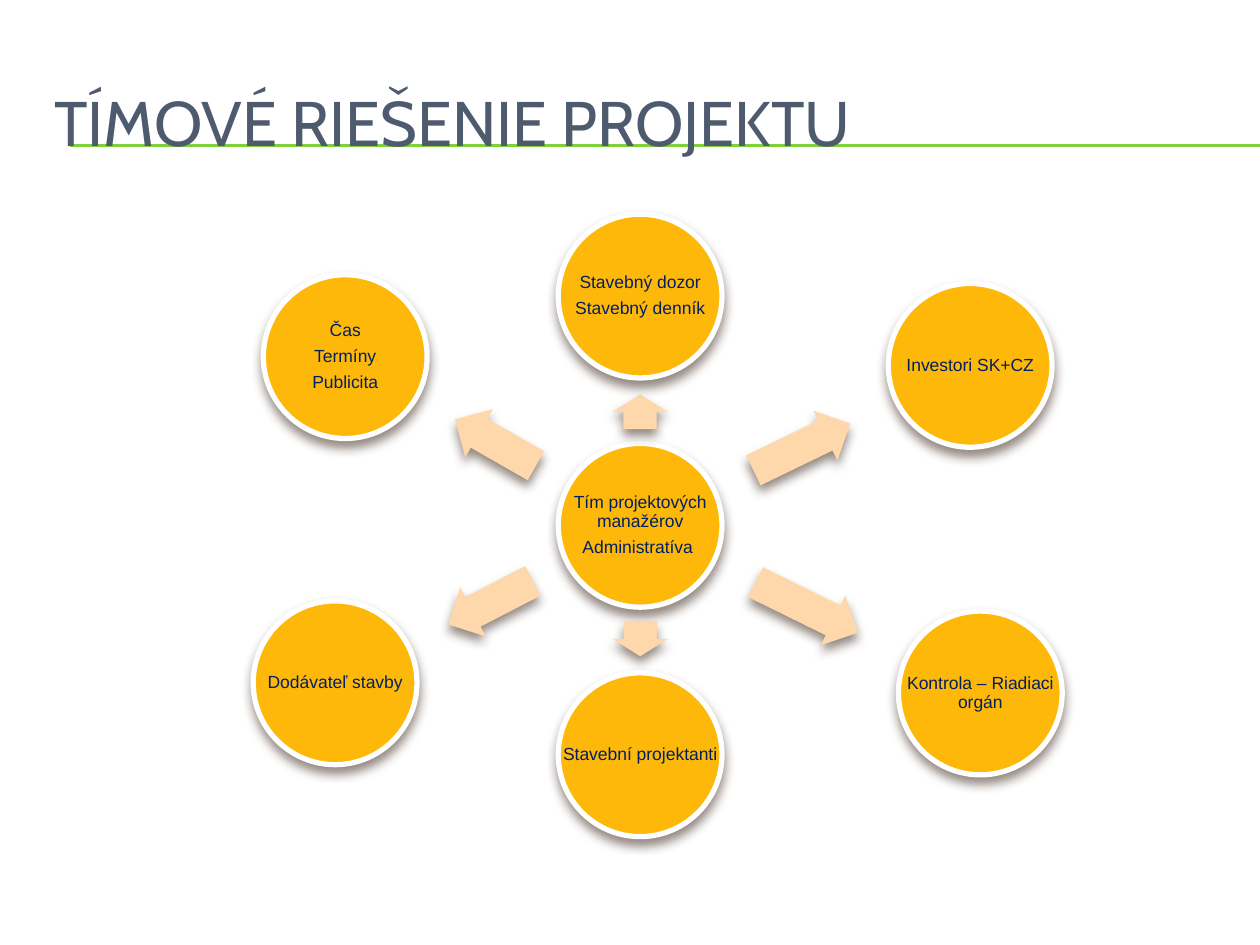
import math
from lxml import etree
from pptx import Presentation
from pptx.dml.color import RGBColor
from pptx.enum import shapes, text
from pptx.oxml import ns
from pptx.util import Pt

COLORS = {
    "rule": "7FD13B",
    "title": "4E5B6F",
    "circle": "FEB80A",
    "border": "FFFFFF",
    "arrow": "FED8AB",
    "label": "002060",
    "shadow": "4E3B30",
}
DIAMETER = 93.6
ARROW_HEIGHT = 31.7
ARROW_SHARE = 0.53
START_SHARE = 0.217
HUB = ((365.8, 300.2), ["Tím projektových manažérov", "Administratíva "])
PARTNERS = [
    ((365.8, 169.2), ["Stavebný dozor", "Stavebný denník"]),
    ((554.4, 208.8), ["Investori SK+CZ"]),
    ((560.2, 396), ["Kontrola – Riadiaci orgán"]),
    ((365.8, 431.3), ["Stavební projektanti"]),
    ((191.5, 390.2), ["Dodávateľ stavby"]),
    ((197.3, 203.8), ["Čas", "Termíny", "Publicita"]),
]


def color(name):
    return RGBColor.from_string(COLORS[name])


def add_effects(properties):
    return etree.SubElement(properties, ns.qn("a:effectLst"))


def add_shadow(shape):
    shape.shadow.inherit = False
    effects = shape._element.spPr.find(ns.qn("a:effectLst"))
    shadow = etree.SubElement(
        effects, ns.qn("a:outerShdw"),
        blurRad=str(Pt(6)), dist=str(Pt(4)), dir="5400000", rotWithShape="0")
    tint = etree.SubElement(shadow, ns.qn("a:srgbClr"), val=COLORS["shadow"])
    etree.SubElement(tint, ns.qn("a:alpha"), val="60000")


def add_text(page, box, lines, font, size, tone, inset):
    frame = page.shapes.add_textbox(*map(Pt, box)).text_frame
    frame.word_wrap = True
    frame.vertical_anchor = text.MSO_ANCHOR.MIDDLE
    frame.margin_left = frame.margin_right = Pt(inset[0])
    frame.margin_top = frame.margin_bottom = Pt(inset[1])
    for index, line in enumerate(lines):
        para = frame.add_paragraph() if index else frame.paragraphs[0]
        span = para.add_run()
        span.text = line
        span.font.name = font
        span.font.size = Pt(size)
        span.font.color.rgb = color(tone)
    return frame


def add_header(page, box):
    for y in (82.8, 83.5):
        rule = page.shapes.add_connector(
            shapes.MSO_CONNECTOR.STRAIGHT, Pt(40.3), Pt(y), Pt(720), Pt(y))
        rule.line.color.rgb = color("rule")
        rule.line.width = Pt(0.75)
        add_effects(rule._element.spPr)
    add_text(page, box, ["TÍMOVÉ RIEŠENIE PROJEKTU"], "Cabin", 36, "title", (7.2, 3.6))


def add_circle(page, center, lines):
    box = (center[0] - DIAMETER / 2, center[1] - DIAMETER / 2, DIAMETER, DIAMETER)
    circle = page.shapes.add_shape(shapes.MSO_SHAPE.OVAL, *map(Pt, box))
    circle.fill.solid()
    circle.fill.fore_color.rgb = color("circle")
    circle.line.color.rgb = color("border")
    circle.line.width = Pt(3)
    add_shadow(circle)
    frame = add_text(page, box, lines, "Arial", 10, "label", (0.9, 0.9))
    for para in frame.paragraphs:
        para.alignment = text.PP_ALIGN.CENTER
        para.line_spacing = 0.9
        para.space_after = Pt(4)


def add_arrow(page, start, end):
    angle = math.atan2(end[1] - start[1], end[0] - start[0])
    gap = math.dist(start, end) - DIAMETER
    length = gap * ARROW_SHARE
    reach = DIAMETER / 2 + gap * START_SHARE + length / 2
    x = start[0] + reach * math.cos(angle)
    y = start[1] + reach * math.sin(angle)
    arrow = page.shapes.add_shape(
        shapes.MSO_SHAPE.RIGHT_ARROW,
        Pt(x - length / 2), Pt(y - ARROW_HEIGHT / 2), Pt(length), Pt(ARROW_HEIGHT))
    arrow.adjustments[0] = 0.6
    arrow.adjustments[1] = 0.5
    arrow.rotation = math.degrees(angle) % 360
    arrow.fill.solid()
    arrow.fill.fore_color.rgb = color("arrow")
    arrow.line.fill.background()
    add_shadow(arrow)


def add_team_diagram(page):
    hub_center, hub_lines = HUB
    add_circle(page, hub_center, hub_lines)
    for center, lines in PARTNERS:
        add_arrow(page, hub_center, center)
        add_circle(page, center, lines)


def main():
    deck = Presentation()
    deck.slide_width = Pt(720)
    deck.slide_height = Pt(540)
    page = deck.slides.add_slide(deck.slide_layouts[6])
    add_header(page, (23.8, 36, 684, 66.2))
    add_team_diagram(page)
    deck.save("out.pptx")


if __name__ == "__main__":
    main()
